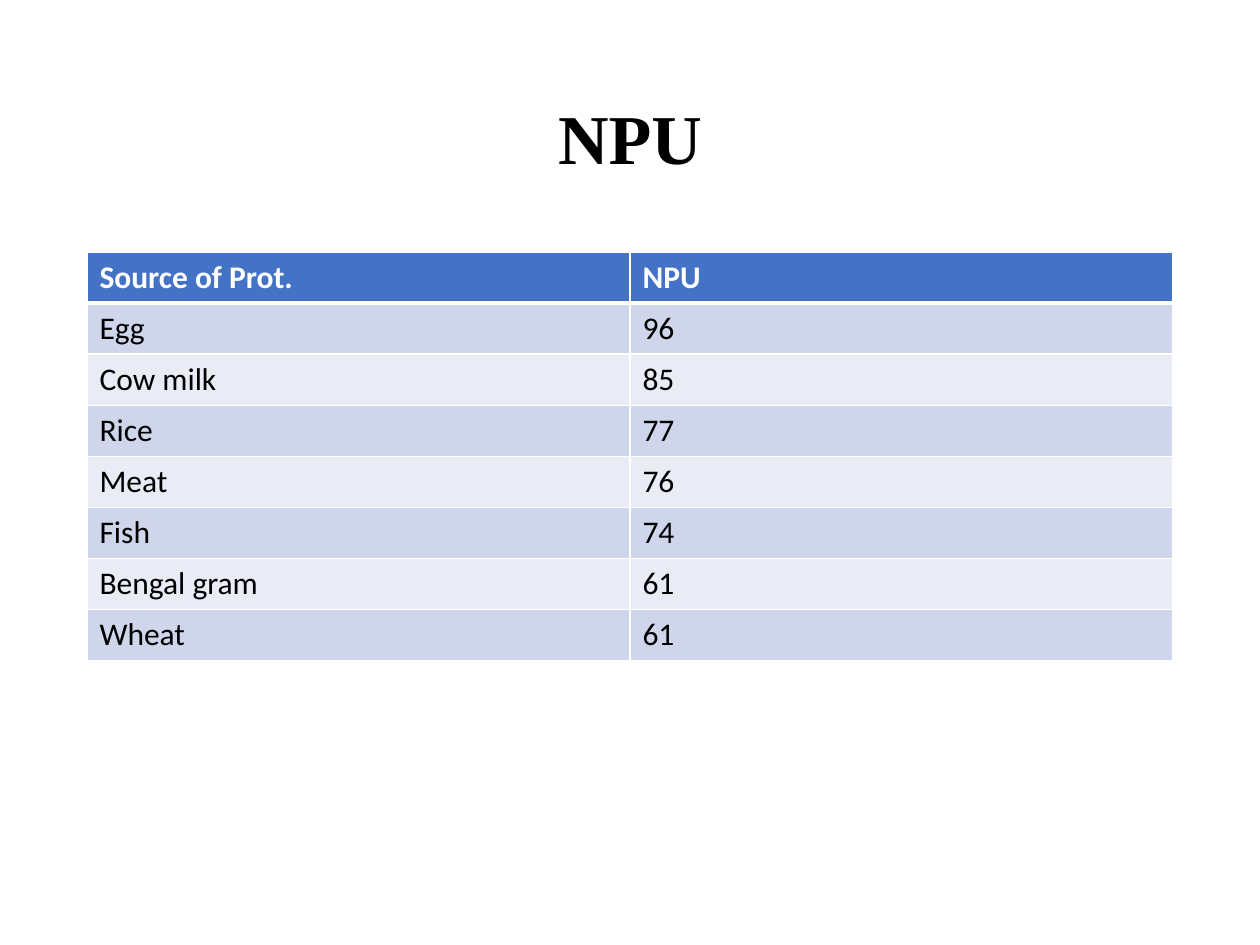
from lxml import etree
from pptx import Presentation
from pptx.dml.color import RGBColor
from pptx.enum import text
from pptx.oxml import ns
from pptx.util import Pt

COLORS = {"header": "4472C4", "odd": "CFD5EA", "even": "E9EBF5",
          "white": "FFFFFF", "black": "000000"}


def style_font(font, name, size, color, bold):
    font.name, font.size, font.bold = name, Pt(size), bold
    font.color.rgb = RGBColor.from_string(COLORS[color])


def add_border(cell, side, width):
    ln = etree.SubElement(cell._tc.get_or_add_tcPr(), ns.qn(f"a:{side}"), w=str(Pt(width)))
    fill = etree.SubElement(ln, ns.qn("a:solidFill"))
    etree.SubElement(fill, ns.qn("a:srgbClr"), val=COLORS["white"])


prs = Presentation()
prs.slide_width, prs.slide_height = Pt(720), Pt(540)
s = prs.slides.add_slide(prs.slide_layouts[5])

title = s.shapes.title
title.left, title.top, title.width, title.height = Pt(0), Pt(28.8), Pt(720), Pt(104.4)
tf = title.text_frame
tf.text = "NPU"
tf.vertical_anchor = text.MSO_ANCHOR.MIDDLE
p = tf.paragraphs[0]
p.alignment = text.PP_ALIGN.CENTER
p.line_spacing = 0.9
style_font(p.runs[0].font, "Times New Roman", 40, "black", True)

rows = [
    ("Source of Prot.", "NPU"),
    ("Egg", "96"),
    ("Cow milk", "85"),
    ("Rice", "77"),
    ("Meat", "76"),
    ("Fish", "74"),
    ("Bengal gram", "61"),
    ("Wheat", "61"),
]
row_height = 29.2
table = s.shapes.add_table(len(rows), 2, Pt(49.7), Pt(144),
                           Pt(620.6), Pt(row_height * len(rows))).table

for i, values in enumerate(rows):
    table.rows[i].height = Pt(row_height)
    band = "header" if i == 0 else "odd" if i % 2 else "even"
    for j, value in enumerate(values):
        cell = table.cell(i, j)
        cell.text = value
        cell.margin_left = cell.margin_right = Pt(7.2)
        cell.margin_top = cell.margin_bottom = Pt(3.6)
        add_border(cell, "lnL", 1)
        add_border(cell, "lnR", 1)
        add_border(cell, "lnT", 3 if i == 1 else 1)
        add_border(cell, "lnB", 3 if i == 0 else 1)
        cell.fill.solid()
        cell.fill.fore_color.rgb = RGBColor.from_string(COLORS[band])
        r = cell.text_frame.paragraphs[0].runs[0]
        style_font(r.font, "Calibri", 18, "white" if i == 0 else "black", i == 0)

prs.save("out.pptx")
